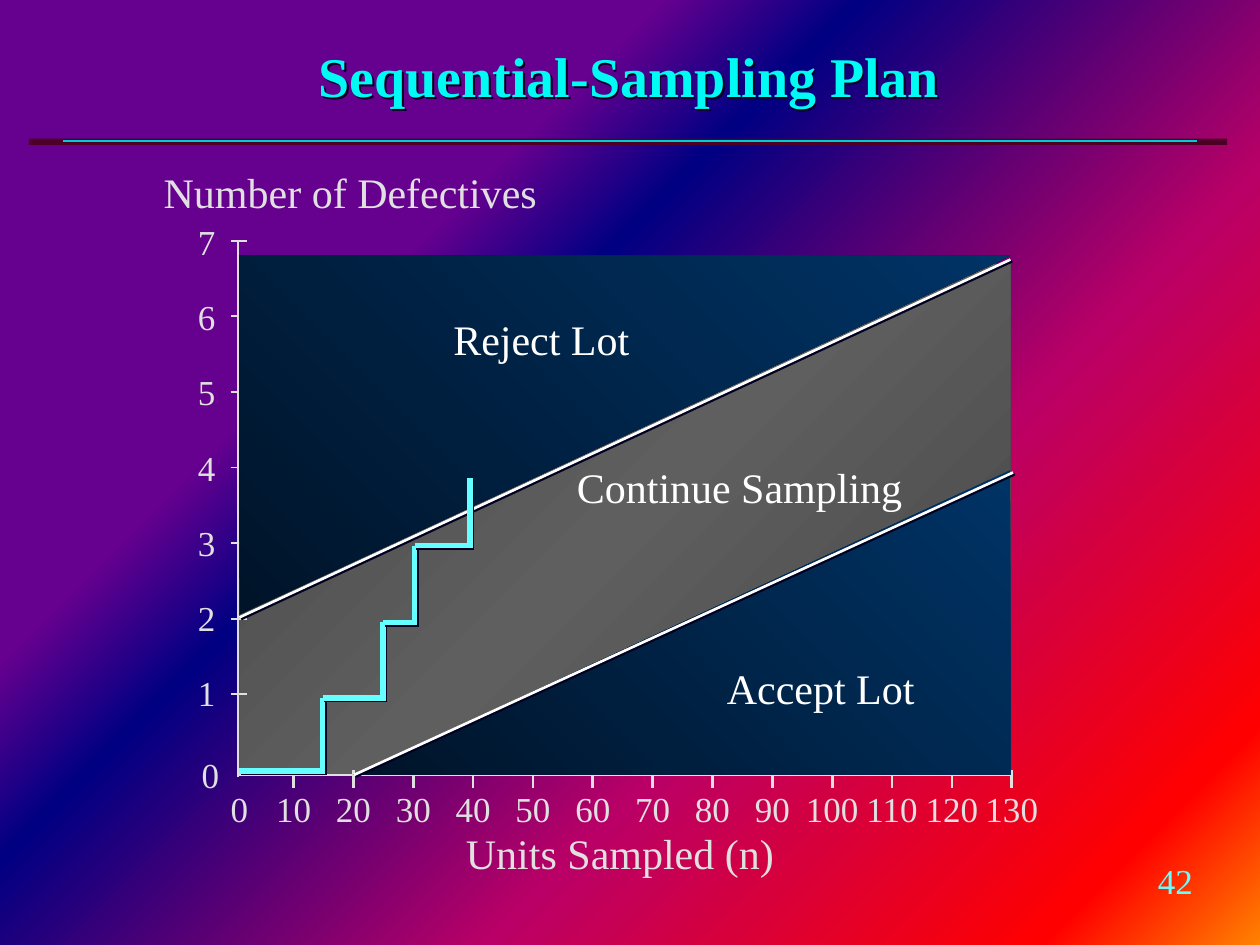
from lxml.etree import SubElement
from pptx import Presentation
from pptx.dml.color import RGBColor
from pptx.enum.shapes import MSO_CONNECTOR, MSO_SHAPE
from pptx.enum.text import MSO_ANCHOR, PP_ALIGN
from pptx.oxml import parse_xml
from pptx.oxml.ns import nsdecls, qn
from pptx.util import Inches, Pt

COLORS = {
    "title": "00FAF4", "axis": "E0E0E0", "white": "FFFFFF", "step": "66FFFF",
    "bar": "4C0026", "rule": "00CECE", "shadow": "000020",
}
BACKGROUND = [(30, "66008F"), (39, "000082"), (65, "BA0066"), (90, "FF0000"), (100, "FF8200")]
CONTINUE = [(0, "444444"), (50, "5F5F5F"), (100, "444444")]
ACCEPT = [(0, "003366"), (100, "001429")]
REJECT = [(0, "001429"), (100, "003366")]
EFFECTS = {
    False: f"<a:effectLst {nsdecls('a')}/>",
    True: f"<a:effectLst {nsdecls('a')}>"
          '<a:outerShdw dist="17780" dir="2700000" algn="ctr" rotWithShape="0">'
          f'<a:srgbClr val="{COLORS["shadow"]}"/></a:outerShdw></a:effectLst>',
}


def add_text(text, x, y, w, h, size=20, color="axis", bold=False, align=PP_ALIGN.CENTER,
             anchor=MSO_ANCHOR.TOP, wrap=False, shadow=False):
    tb = s.shapes.add_textbox(Inches(x), Inches(y), Inches(w), Inches(h))
    tf = tb.text_frame
    tf.word_wrap = wrap
    tf.vertical_anchor = anchor
    p = tf.paragraphs[0]
    p.alignment = align
    r = p.add_run()
    r.text = text
    r.font.name = "Times New Roman"
    r.font.size = Pt(size)
    r.font.bold = bold
    r.font.color.rgb = RGBColor.from_string(COLORS[color])
    if shadow:
        tb._element.spPr.append(parse_xml(EFFECTS[True]))
    return tb


def add_line(shapes, x1, y1, x2, y2, color="axis", width=1, shadow=False):
    line = shapes.add_connector(MSO_CONNECTOR.STRAIGHT, Inches(x1), Inches(y1), Inches(x2), Inches(y2))
    line.line.color.rgb = RGBColor.from_string(COLORS[color])
    line.line.width = Pt(width)
    line._element.spPr.append(parse_xml(EFFECTS[shadow]))


prs = Presentation()
prs.slide_width, prs.slide_height = Inches(10), Inches(7.5)
s = prs.slides.add_slide(prs.slide_layouts[6])

# Header and page number
bar = s.shapes.add_shape(MSO_SHAPE.RECTANGLE, Inches(0.23), Inches(1.1), Inches(9.51), Inches(0.05))
bar.shadow.inherit = False
bar.fill.solid()
bar.fill.fore_color.rgb = RGBColor.from_string(COLORS["bar"])
bar.line.fill.background()
add_line(s.shapes, 0.5, 1.12, 9.5, 1.12, color="rule")
add_text("42", 9.09, 6.77, 0.52, 0.43, color="step", align=PP_ALIGN.LEFT)
add_text("Sequential-Sampling Plan", 0.33, 0.08, 9.33, 1.04, size=32, color="title", bold=True,
         anchor=MSO_ANCHOR.MIDDLE, wrap=True, shadow=True)

# Decision regions, with the axis ticks between the band and the triangles
regions = []
for kind, x, y, w, h, flip, stops in [
    (MSO_SHAPE.RECTANGLE, 1.9, 2.1, 6.12, 4.04, None, CONTINUE),
    (MSO_SHAPE.RIGHT_TRIANGLE, 2.81, 3.73, 5.21, 2.42, "flipH", ACCEPT),
    (MSO_SHAPE.RIGHT_TRIANGLE, 1.9, 2.03, 6.12, 2.85, "flipV", REJECT),
]:
    if stops is ACCEPT:
        add_line(s.shapes, 1.89, 6.15, 8.02, 6.15)
        tick_xs = [2.33 + 0.475 * i for i in range(13)]
        for tick_x in tick_xs:
            add_line(s.shapes, tick_x, 6.11, tick_x, 6.25, width=1.5)
        for i in range(7):
            add_line(s.shapes, 1.83, 1.91 + 0.6 * i, 1.96, 1.91 + 0.6 * i)
    sp = s.shapes.add_shape(kind, Inches(x), Inches(y), Inches(w), Inches(h))
    sp.shadow.inherit = False
    sp.line.fill.background()
    if flip:
        sp._element.spPr.find(qn("a:xfrm")).set(flip, "1")
    regions.append((sp.fill, sp._element, stops))

# Diagonal gradients for the background and the regions
for fill, element, stops in [(s.background.fill, s._element, BACKGROUND)] + regions:
    fill.gradient()
    fill.gradient_angle = 315
    gs_list = next(element.iter(qn("a:gsLst")))
    for gs in list(gs_list):
        gs_list.remove(gs)
    for pos, color in stops:
        gs = SubElement(gs_list, qn("a:gs"), pos=str(pos * 1000))
        SubElement(gs, qn("a:srgbClr"), val=color)

# Axis labels
x_labels = add_text("\t".join(str(n) for n in range(0, 131, 10)), 1.68, 6.2, 6.81, 0.43,
                    align=PP_ALIGN.LEFT, wrap=True)
x_labels.text_frame.margin_left = Inches(0.15)
tabs = SubElement(x_labels.text_frame.paragraphs[0]._p.get_or_add_pPr(), qn("a:tabLst"))
for tick_x in tick_xs:
    SubElement(tabs, qn("a:tab"), pos=str(Inches(tick_x - 1.83)), algn="ctr")
for i in range(7):
    add_text(str(7 - i), 1.47, 1.7 + 0.597 * i, 0.34, 0.43)
add_text("0", 1.5, 5.93, 0.34, 0.43)
add_text("Units Sampled (n)", 3.52, 6.52, 2.8, 0.5, size=24)
add_text("Number of Defectives", 1.2, 1.27, 3.16, 0.5, size=24)

# Vertical axis and decision limits
add_line(s.shapes, 1.89, 1.91, 1.89, 6.17)
add_line(s.shapes, 2.81, 6.15, 8.04, 3.75, color="white", width=1.5, shadow=True)
add_line(s.shapes, 1.9, 4.9, 8.02, 2.06, color="white", width=1.5, shadow=True)
for text, x, y, w in [("Reject Lot", 3.5, 2.44, 1.6), ("Accept Lot", 5.67, 5.21, 1.69),
                      ("Continue Sampling", 4.48, 3.61, 2.78)]:
    add_text(text, x, y, w, 0.5, size=24, color="white", align=PP_ALIGN.LEFT)

# Sampling path: one step right, then one step up
path_steps = s.shapes.add_group_shape().shapes
corners = [(1.9, 6.12), (2.56, 5.54), (3.04, 4.94), (3.29, 4.33), (3.73, 3.79)]
for (x1, y1), (x2, y2) in zip(corners, corners[1:]):
    add_line(path_steps, x1, y1, x2, y1, color="step", width=3, shadow=True)
    add_line(path_steps, x2, y1 + 0.02, x2, y2, color="step", width=3, shadow=True)

prs.save("out.pptx")
